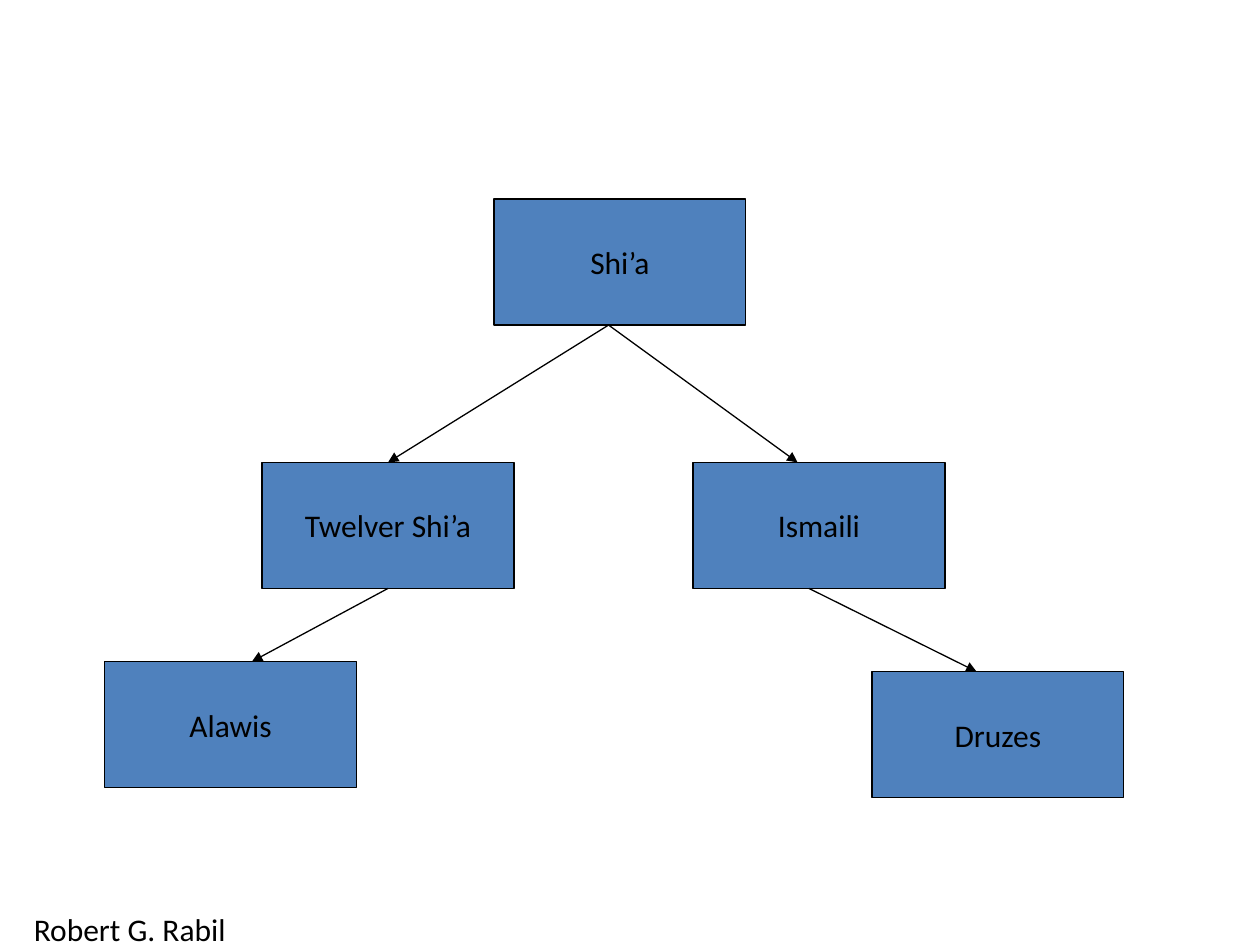
from dataclasses import dataclass

from lxml.etree import SubElement
from pptx import Presentation
from pptx.dml.color import RGBColor
from pptx.enum.shapes import MSO_CONNECTOR as Connector, MSO_SHAPE as Shape
from pptx.enum.text import MSO_ANCHOR as Anchor, MSO_AUTO_SIZE as AutoSize, PP_ALIGN as Align
from pptx.oxml.ns import qn
from pptx.util import Inches, Pt


@dataclass(frozen=True)
class Theme:
    fill: RGBColor = RGBColor(0x4F, 0x81, 0xBD)
    ink: RGBColor = RGBColor(0, 0, 0)
    font: str = "Calibri"
    text_size: Pt = Pt(18)
    line_width: Pt = Pt(0.75)


THEME = Theme()
BOX_WIDTH, BOX_HEIGHT = 2, 1
TOP, BOTTOM = 0, 2

# Branch name: left, top
BRANCHES = {
    "Shi’a": (3.92, 1.58),
    "Twelver Shi’a": (2.08, 3.67),
    "Ismaili": (5.5, 3.67),
    "Alawis": (0.83, 5.25),
    "Druzes": (6.92, 5.33),
}

# Parent, x where the arrow leaves it, child, x where the arrow meets it
DESCENTS = [
    ("Shi’a", 4.83, "Twelver Shi’a", 3.08),
    ("Shi’a", 4.83, "Ismaili", 6.33),
    ("Twelver Shi’a", 3.08, "Alawis", 2),
    ("Ismaili", 6.42, "Druzes", 7.75),
]


def add_text(shape, text, align):
    frame = shape.text_frame
    frame.word_wrap = False
    para = frame.paragraphs[0]
    para.alignment = align
    span = para.add_run()
    span.text = text
    span.font.name = THEME.font
    span.font.size = THEME.text_size
    span.font.color.rgb = THEME.ink
    return frame


def style_line(line):
    line.color.rgb = THEME.ink
    line.width = THEME.line_width


def add_branch(page, name, left, top):
    box = page.shapes.add_shape(Shape.RECTANGLE, Inches(left), Inches(top),
                                Inches(BOX_WIDTH), Inches(BOX_HEIGHT))
    box.shadow.inherit = False
    box.fill.solid()
    box.fill.fore_color.rgb = THEME.fill
    style_line(box.line)
    add_text(box, name, Align.CENTER).vertical_anchor = Anchor.MIDDLE
    return box


def is_middle(box, x):
    return abs(box.left + box.width // 2 - Inches(x)) < Inches(0.01)


def add_arrow(page, parent, start_x, child, end_x):
    arrow = page.shapes.add_connector(Connector.STRAIGHT,
                                      Inches(start_x), parent.top + parent.height,
                                      Inches(end_x), child.top)
    # Join only the ends that sit at the middle of a side
    if is_middle(parent, start_x):
        arrow.begin_connect(parent, BOTTOM)
    if is_middle(child, end_x):
        arrow.end_connect(child, TOP)
    style_line(arrow.line)
    SubElement(arrow.line._get_or_add_ln(), qn("a:tailEnd"), type="triangle")
    SubElement(arrow._element.spPr, qn("a:effectLst"))


def add_author(page, name):
    box = page.shapes.add_textbox(Inches(0.17), Inches(7.17), Inches(1.74), Inches(0.4))
    add_text(box, name, Align.LEFT).auto_size = AutoSize.SHAPE_TO_FIT_TEXT


def main():
    deck = Presentation()
    deck.slide_width, deck.slide_height = Inches(10), Inches(7.5)
    page = deck.slides.add_slide(deck.slide_layouts[6])

    # Family tree
    boxes = {name: add_branch(page, name, *spot) for name, spot in BRANCHES.items()}
    for parent, start_x, child, end_x in DESCENTS:
        add_arrow(page, boxes[parent], start_x, boxes[child], end_x)

    # Author credit
    add_author(page, "Robert G. Rabil")

    deck.save("out.pptx")


if __name__ == "__main__":
    main()
